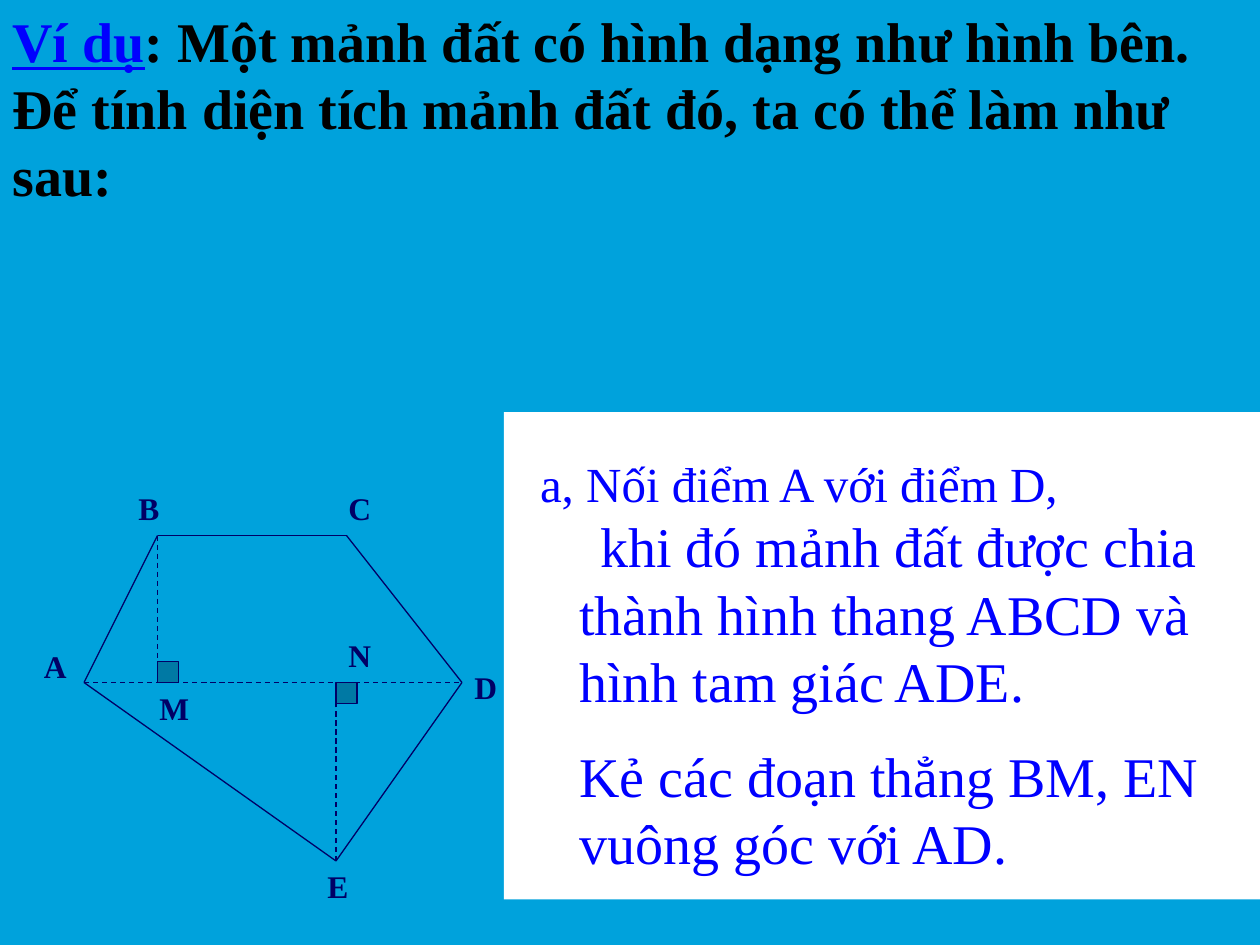
"""Build the slide that splits a plot of land ABCDE into simple figures."""
from typing import NamedTuple

import pptx
import pptx.dml.color
import pptx.enum.dml
import pptx.enum.shapes
import pptx.enum.text
import pptx.util
from pptx.oxml.ns import qn

Pt = pptx.util.Pt
FONT = "Times New Roman"
SKY, NAVY, TEAL, BLUE, BLACK, WHITE = "00A2DC", "000066", "0079A4", "0000FF", "000000", "FFFFFF"


class Vertex(NamedTuple):
    x: float
    y: float
    label_x: float
    label_y: float


class Segment(NamedTuple):
    start: str
    end: str
    dashed: bool = False


class RightAngle(NamedTuple):
    left: float
    top: float


VERTICES = {
    "A": Vertex(48, 390, 18, 366),
    "B": Vertex(90, 306, 72, 276),
    "C": Vertex(198, 306, 192, 276),
    "D": Vertex(264, 390, 264, 378),
    "E": Vertex(192, 492, 180, 492),
    "M": Vertex(90, 390, 84, 390),
    "N": Vertex(192, 390, 192, 360),
}
SEGMENTS = [
    Segment("A", "D", True), Segment("B", "M", True), Segment("E", "N", True),
    Segment("B", "C"), Segment("B", "A"), Segment("C", "D"),
    Segment("A", "E"), Segment("E", "D"),
]
RIGHT_ANGLES = [RightAngle(90, 378), RightAngle(192, 390)]


def rgb(code: str) -> pptx.dml.color.RGBColor:
    return pptx.dml.color.RGBColor.from_string(code)


def write(paragraph, text: str, *, size: float, color: str, bold: bool = False,
          underline: bool = False) -> None:
    run = paragraph.add_run()
    run.text = text
    run.font.name = FONT
    run.font.size = Pt(size)
    run.font.bold = bold
    run.font.underline = underline
    run.font.color.rgb = rgb(color)


def add_text_box(slide, left: float, top: float, width: float, height: float,
                 wrap: bool = True):
    box = slide.shapes.add_textbox(Pt(left), Pt(top), Pt(width), Pt(height))
    box.text_frame.word_wrap = wrap
    return box.text_frame.paragraphs[0]


def add_rectangle(slide, left: float, top: float, width: float, height: float,
                  fill: str, line: str | None = None):
    rectangle = slide.shapes.add_shape(
        pptx.enum.shapes.MSO_SHAPE.RECTANGLE, Pt(left), Pt(top), Pt(width), Pt(height))
    rectangle.shadow.inherit = False
    rectangle.fill.solid()
    rectangle.fill.fore_color.rgb = rgb(fill)
    if line:
        rectangle.line.color.rgb = rgb(line)
        rectangle.line.width = Pt(0.75)
    else:
        rectangle.line.fill.background()
    return rectangle


def draw_segment(slide, segment: Segment) -> None:
    start, end = VERTICES[segment.start], VERTICES[segment.end]
    edge = slide.shapes.add_connector(
        pptx.enum.shapes.MSO_CONNECTOR.STRAIGHT,
        Pt(start.x), Pt(start.y), Pt(end.x), Pt(end.y))
    edge.line.color.rgb = rgb(NAVY)
    edge.line.width = Pt(0.75)
    if segment.dashed:
        edge.line.dash_style = pptx.enum.dml.MSO_LINE.DASH
    properties = edge._element.spPr
    properties.append(properties.makeelement(qn("a:effectLst"), {}))


def draw_plot(slide) -> None:
    for segment in SEGMENTS:
        draw_segment(slide, segment)
    for corner in RIGHT_ANGLES:
        add_rectangle(slide, corner.left, corner.top, 12, 12, TEAL, NAVY)
    for name, vertex in VERTICES.items():
        label = add_text_box(slide, vertex.label_x, vertex.label_y, 30, 29)
        write(label, name, size=18, color=NAVY, bold=True)


def draw_steps(slide) -> None:
    panel = add_rectangle(slide, 288, 235.5, 432, 278.5, WHITE)
    frame = panel.text_frame
    frame.word_wrap = True
    frame.vertical_anchor = pptx.enum.text.MSO_ANCHOR.TOP
    frame.margin_top = Pt(57)
    split, perpendiculars = frame.paragraphs[0], frame.add_paragraph()
    perpendiculars.space_before = Pt(16)
    for step, indent, text in (
        (split, 12, "khi đó mảnh đất được chia thành hình thang ABCD và hình tam giác ADE."),
        (perpendiculars, 0, "Kẻ các đoạn thẳng BM, EN vuông góc với AD."),
    ):
        step.alignment = pptx.enum.text.PP_ALIGN.LEFT
        layout = step._p.get_or_add_pPr()
        layout.set("marL", str(Pt(36)))
        layout.set("indent", str(Pt(indent)))
        write(step, text, size=32, color=BLUE)
    join = add_text_box(slide, 301.5, 255.5, 314, 41, wrap=False)
    write(join, "a, Nối điểm A với điểm D,", size=28, color=BLUE)


def main() -> None:
    deck = pptx.Presentation()
    deck.slide_width, deck.slide_height = Pt(720), Pt(540)
    slide = deck.slides.add_slide(deck.slide_layouts[6])
    slide.background.fill.solid()
    slide.background.fill.fore_color.rgb = rgb(SKY)
    problem = add_text_box(slide, 0, 0, 720, 122)
    write(problem, "Ví dụ", size=32, color=BLUE, bold=True, underline=True)
    write(problem, ": Một mảnh đất có hình dạng như hình bên. "
          "Để tính diện tích mảnh đất đó, ta có thể làm như sau:",
          size=32, color=BLACK, bold=True)
    draw_plot(slide)
    draw_steps(slide)
    deck.save("out.pptx")


if __name__ == "__main__":
    main()
